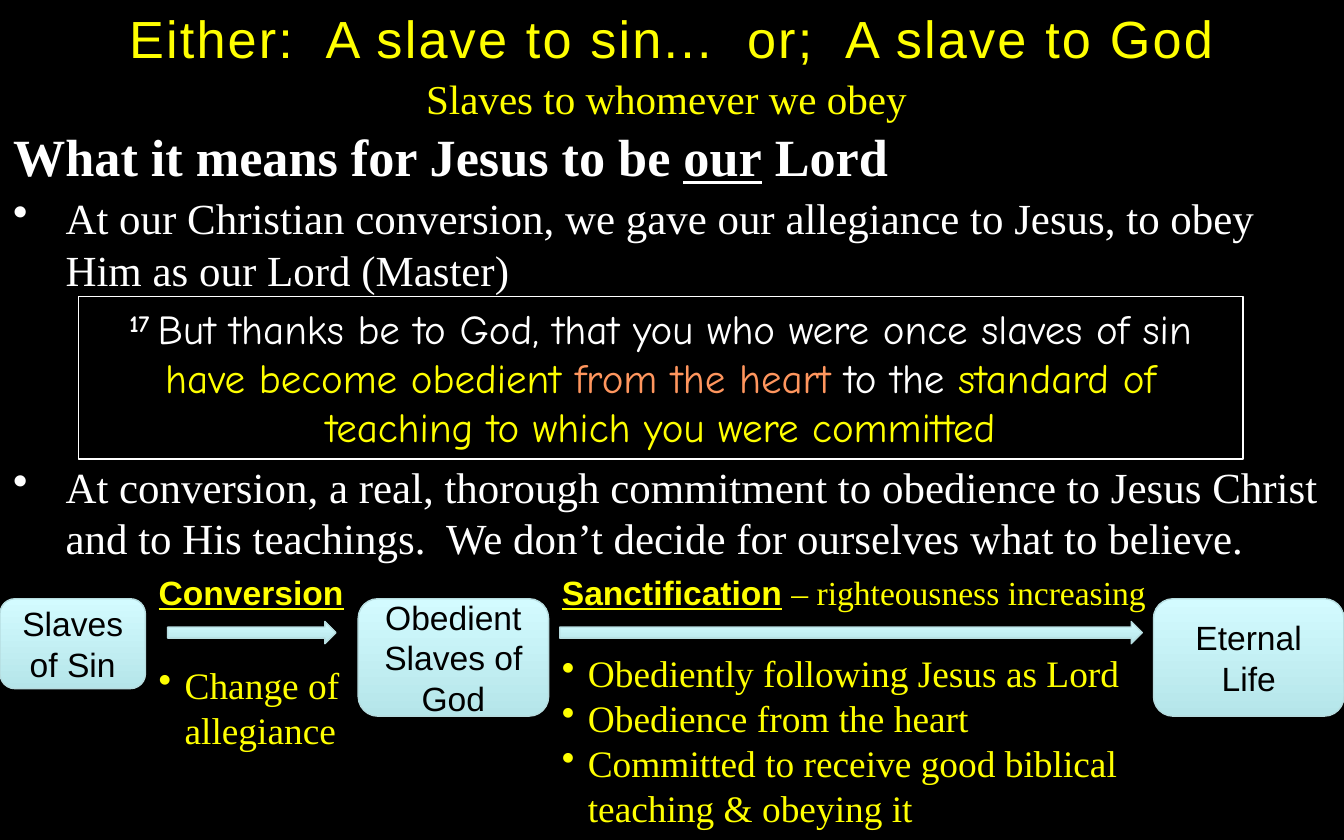
from dataclasses import dataclass

import pptx
import pptx.dml.color
import pptx.enum.shapes
import pptx.enum.text
import pptx.oxml
import pptx.oxml.ns
import pptx.util
from pptx.util import Cm

ALIGN = pptx.enum.text.PP_ALIGN
ANCHOR = pptx.enum.text.MSO_ANCHOR
AUTO = pptx.enum.text.MSO_AUTO_SIZE
SHAPE = pptx.enum.shapes.MSO_SHAPE


@dataclass(frozen=True)
class Theme:
    black: str = "000000"
    white: str = "FFFFFF"
    yellow: str = "FFFF00"
    orange: str = "FF965E"
    ice_dark: str = "B5E5E9"
    ice_light: str = "D3FBFF"
    ice_line: str = "B6DCDF"
    serif: str = "Times New Roman"
    sans: str = "Arial"
    hand: str = "Comic Neue"
    heading: float = 28
    point: float = 23
    subtitle: float = 22
    detail: float = 20
    label: float = 18
    line: float = 0.75


T = Theme()


def rgb(value):
    return pptx.dml.color.RGBColor.from_string(value)


def apply(target, values):
    for name, value in values.items():
        setattr(target, name, value)


def style(name, size, color, **extra):
    return {"name": name, "size": size, "color": color, **extra}


def add_run(p, text, look):
    r = p.add_run()
    r.text = text
    font = dict(look)
    r.font.color.rgb = rgb(font.pop("color"))
    font["size"] = pptx.util.Pt(font["size"])
    attrs = font.pop("attrs", {})
    apply(r.font, font)
    for key, value in attrs.items():
        r._r.get_or_add_rPr().set(key, value)


def set_bullet(p, indent):
    pPr = p._p.get_or_add_pPr()
    pPr.set("marL", str(indent))
    pPr.set("indent", str(-indent))
    bullet = pptx.oxml.parse_xml(
        f'<a:buChar {pptx.oxml.ns.nsdecls("a")} char="•"/>')
    pPr.append(bullet)


def fill_text(tf, paragraphs, align=ALIGN.LEFT, indent=None, **frame):
    apply(tf, {"word_wrap": True, **frame})
    for i, runs in enumerate(paragraphs):
        p = tf.add_paragraph() if i else tf.paragraphs[0]
        p.alignment = align
        if indent:
            set_bullet(p, indent)
        for text, look in runs:
            add_run(p, text, look)


def add_text(s, box, paragraphs, **layout):
    sp = s.shapes.add_textbox(*map(Cm, box))
    fill_text(sp.text_frame, paragraphs, vertical_anchor=ANCHOR.TOP,
              auto_size=AUTO.SHAPE_TO_FIT_TEXT, **layout)


def add_bullets(s, box, lines, look, indent):
    add_text(s, box, [[(line, look)] for line in lines], indent=Cm(indent))


def add_outlined(s, kind, box, color):
    sp = s.shapes.add_shape(kind, *map(Cm, box))
    sp.shadow.inherit = False
    sp.line.color.rgb = rgb(color)
    sp.line.width = pptx.util.Pt(T.line)
    return sp


def add_ice(s, kind, box):
    sp = add_outlined(s, kind, box, T.ice_line)
    sp.fill.gradient()
    sp.fill.gradient_angle = 90
    for stop, color, position in zip(
            sp.fill.gradient_stops, (T.ice_dark, T.ice_light), (0, 1)):
        stop.color.rgb = rgb(color)
        stop.position = position
    return sp


def add_stage(s, box, text):
    sp = add_ice(s, SHAPE.ROUNDED_RECTANGLE, box)
    fill_text(sp.text_frame, [[(text, style(T.sans, T.label, T.black))]],
              align=ALIGN.CENTER, vertical_anchor=ANCHOR.MIDDLE)


def add_verse(s, box, runs):
    sp = add_outlined(s, SHAPE.RECTANGLE, box, T.white)
    sp.fill.background()
    fill_text(sp.text_frame, [runs], align=ALIGN.CENTER,
              vertical_anchor=ANCHOR.TOP, auto_size=AUTO.SHAPE_TO_FIT_TEXT)


def add_headings(s):
    title = style(T.sans, T.heading, T.yellow, attrs={"spc": "120"})
    subtitle = style(T.serif, T.subtitle, T.yellow)
    lead = style(T.serif, T.heading, T.white, bold=True)
    add_text(s, (0.42, 0, 24.56, 1.45),
             [[("Either:  A slave to sin...  or;  A slave to God", title)]],
             align=ALIGN.CENTER)
    add_text(s, (0.21, 1.27, 24.77, 1.19),
             [[("Slaves to whomever we obey", subtitle)]], align=ALIGN.CENTER)
    add_text(s, (0, 2.23, 24.56, 1.45),
             [[("What it means for Jesus to be ", lead),
               ("our", {**lead, "underline": True}),
               (" Lord", lead)]])


def add_points(s):
    point = style(T.serif, T.point, T.white)
    points = [
        (3.5, "At our Christian conversion, we gave our allegiance to Jesus, "
              "to obey Him as our Lord (Master)"),
        (8.58, "At conversion, a real, thorough commitment to obedience to "
               "Jesus Christ and to His teachings.  We don’t decide for "
               "ourselves what to believe."),
    ]
    for top, text in points:
        add_bullets(s, (0, top, 25.4, 2.23), [text], point, 0.99)

    white, yellow, orange = (style(T.hand, T.subtitle, color)
                             for color in (T.white, T.yellow, T.orange))
    number = {**white, "bold": True, "attrs": {"baseline": "30000"}}
    add_verse(s, (1.48, 5.61, 22.01, 3.07), [
        ("17 ", number),
        ("But thanks be to God, that you who were once slaves of sin ", white),
        ("have become obedient ", yellow),
        ("from the heart ", orange),
        ("to the ", white),
        ("standard of teaching to which you were committed", yellow)])


def add_process(s):
    label = style(T.sans, T.label, T.yellow)
    name = {**label, "bold": True, "underline": True}
    detail = style(T.serif, T.detail, T.yellow)

    for left, width, height, text in [
            (0, 2.75, 1.7, "Slaves of Sin"),
            (6.77, 3.6, 2.22, "Obedient Slaves of God"),
            (21.8, 3.6, 2.22, "Eternal Life")]:
        add_stage(s, (left, 11.32, width, height), text)
    for left, width in [(3.17, 3.18), (10.58, 11.01)]:
        add_ice(s, SHAPE.RIGHT_ARROW, (left, 11.75, width, 0.42))

    add_text(s, (2.75, 10.69, 4.23, 1.03), [[("Conversion", name)]])
    add_text(s, (10.37, 10.69, 12.7, 1.03),
             [[("Sanctification", name), (" ", label),
               ("– righteousness increasing", {**label, "name": T.serif})]])
    add_bullets(s, (2.75, 12.4, 4.02, 1.96),
                ["Change of allegiance"], detail, 0.49)
    add_bullets(s, (10.37, 12.17, 13.55, 3.69),
                ["Obediently following Jesus as Lord",
                 "Obedience from the heart",
                 "Committed to receive good biblical teaching & obeying it"],
                detail, 0.49)


def main():
    prs = pptx.Presentation()
    apply(prs, {"slide_width": Cm(25.4), "slide_height": Cm(15.88)})
    s = prs.slides.add_slide(prs.slide_layouts[6])
    s.background.fill.solid()
    s.background.fill.fore_color.rgb = rgb(T.black)
    add_headings(s)
    add_points(s)
    add_process(s)
    prs.save("out.pptx")


if __name__ == "__main__":
    main()
